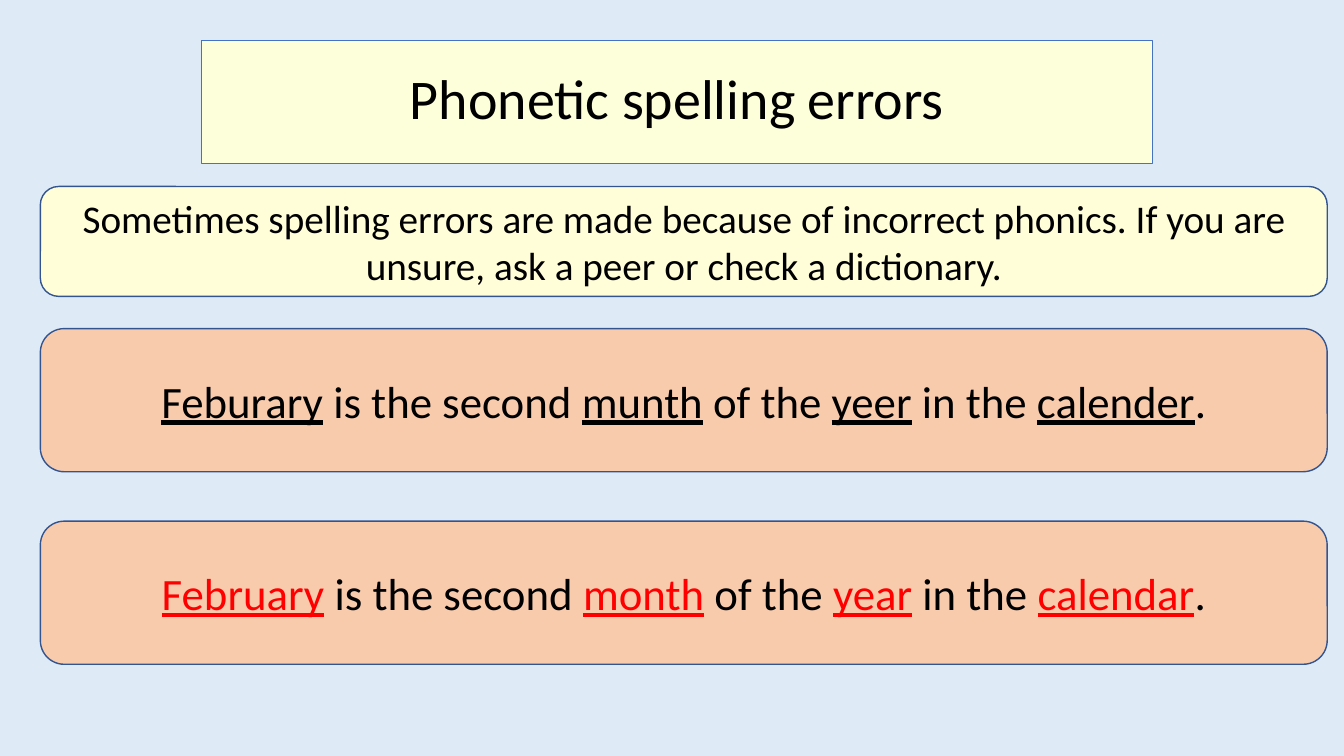
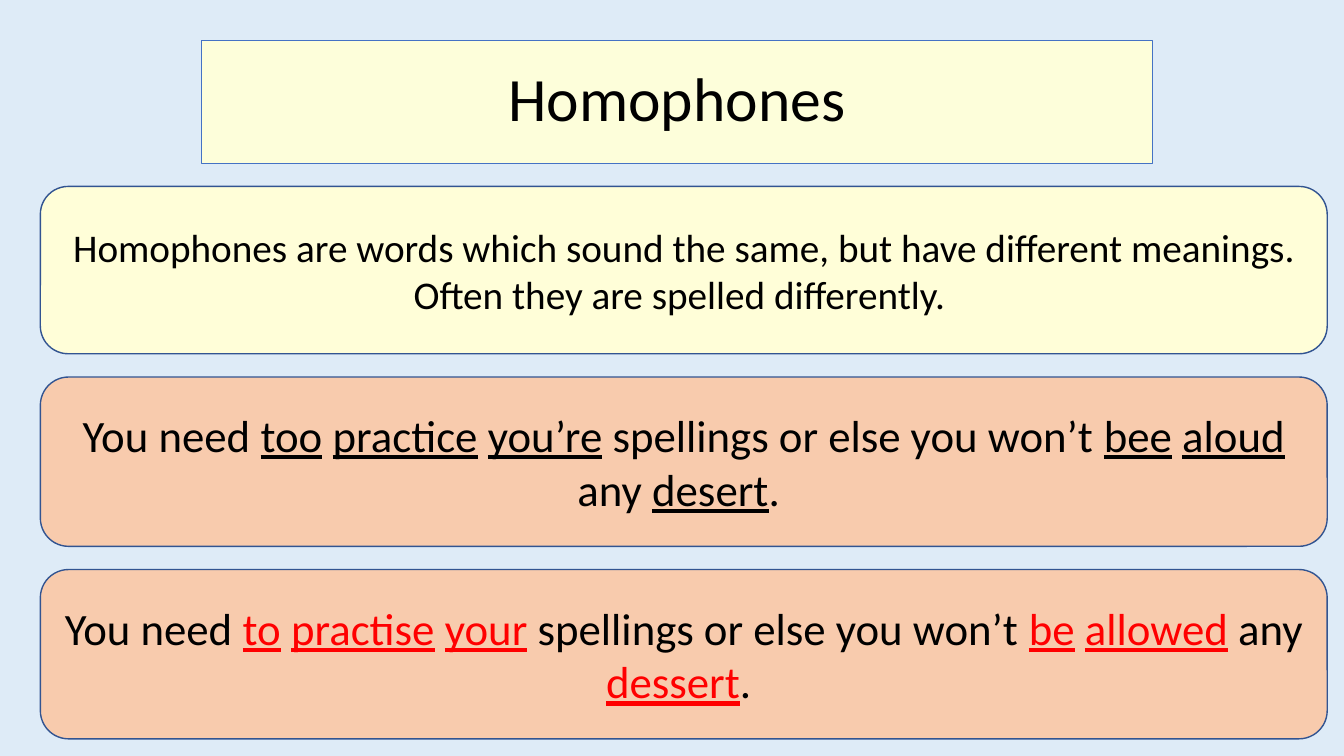
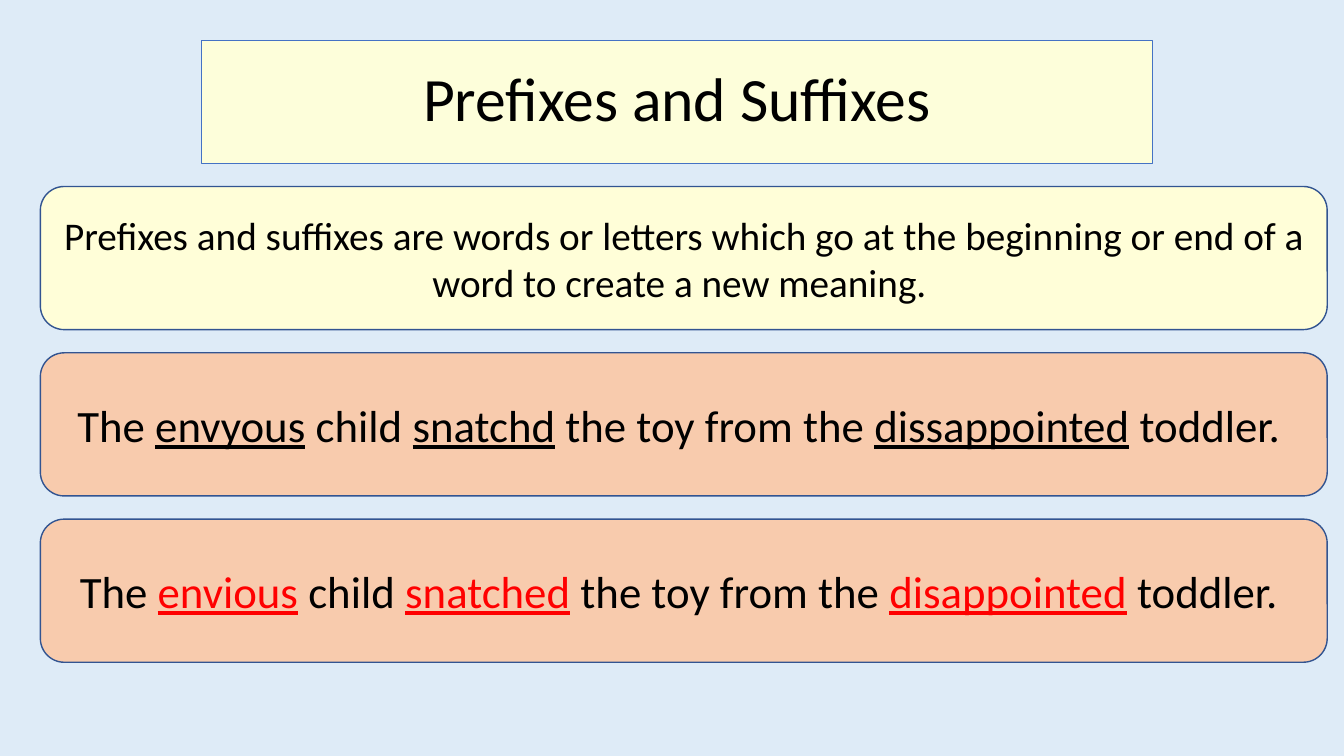
"""Build three slides on common kinds of spelling error."""
from pptx import Presentation
from pptx.dml.color import RGBColor
from pptx.enum.shapes import MSO_SHAPE
from pptx.enum.text import MSO_ANCHOR, MSO_AUTO_SIZE, PP_ALIGN
from pptx.util import Inches, Pt

ROUND = MSO_SHAPE.ROUNDED_RECTANGLE
MIDDLE = MSO_ANCHOR.MIDDLE
FIXED = MSO_AUTO_SIZE.NONE
CENTER = PP_ALIGN.CENTER

SKY = RGBColor(0xDE, 0xEB, 0xF7)
LEMON = RGBColor(0xFD, 0xFE, 0xDA)
CREAM = RGBColor(0xFF, 0xFE, 0xD8)
PEACH = RGBColor(0xF8, 0xCB, 0xAD)
BLUE = RGBColor(0x44, 0x72, 0xC4)
NAVY = RGBColor(0x32, 0x54, 0x91)
BLACK = RGBColor(0, 0, 0)
RED = RGBColor(0xFF, 0, 0)

FONT = "Calibri"
COLS, ROWS = 40, 30
TITLE = (6, 1.6, 28.3, 4.88)
LEFT, WIDE, TOP = 1.2, 38.3, 7.4
FRAME = {"word_wrap": True, "auto_size": FIXED, "vertical_anchor": MIDDLE}

LESSONS = [
    {
        "title": ("Phonetic spelling errors", 40),
        "rule": "Sometimes spelling errors are made because of incorrect "
                "phonics. If you are unsure, ask a peer or check a dictionary.",
        "wrong": "_Feburary_ is the second _munth_ of the _yeer_ in the _calender_.",
        "right": "_February_ is the second _month_ of the _year_ in the _calendar_.",
        "rows": (4.36, 5.68, 5.68),
        "gaps": (1.28, 1.96),
    },
    {
        "title": ("Homophones", 44),
        "rule": "Homophones are words which sound the same, but have different "
                "meanings. Often they are spelled differently. ",
        "wrong": "You need _too_ _practice_ _you’re_ spellings or else you "
                 "won’t _bee_ _aloud_ any _desert_. ",
        "right": "You need _to_ _practise_ _your_ spellings or else you "
                 "won’t _be_ _allowed_ any _dessert_. ",
        "rows": (6.64, 6.72, 6.72),
        "gaps": (0.92, 0.92),
    },
    {
        "title": ("Prefixes and Suffixes", 44),
        "rule": "Prefixes and suffixes are words or letters which go at the "
                "beginning or end of a word to create a new meaning. ",
        "wrong": "The _envyous_ child _snatchd_ the toy from the "
                 "_dissappointed_ toddler. ",
        "right": "The _envious_ child _snatched_ the toy from the "
                 "_disappointed_ toddler. ",
        "rows": (5.68, 5.68, 5.68),
        "gaps": (0.92, 0.92),
    },
]


class Deck:
    """Hold the shared style and the current slide."""

    def __init__(self):
        """Set the slide size and the background."""
        self.prs = Presentation()
        self.prs.slide_width = Inches(13.33)
        self.prs.slide_height = Inches(7.5)
        fill = self.prs.slide_master.background.fill
        fill.solid()
        fill.fore_color.rgb = SKY
        self.slide = None

    def place(self, cell):
        """Turn columns and rows into slide lengths."""
        col = self.prs.slide_width / COLS
        row = self.prs.slide_height / ROWS
        return [round(n * unit) for n, unit in zip(cell, (col, row, col, row))]

    def style(self, shape, fill, line, width):
        """Give a shape its fill, outline and text frame."""
        shape.fill.solid()
        shape.fill.fore_color.rgb = fill
        shape.line.color.rgb = line
        shape.line.width = Pt(width)
        for name, value in FRAME.items():
            setattr(shape.text_frame, name, value)

    def label(self, shape, text, size, mark=BLACK):
        """Set centred text, underlining the words between underscores."""
        para = shape.text_frame.paragraphs[0]
        para.alignment = CENTER
        for i, part in enumerate(text.split("_")):
            if not part:
                continue
            run = para.add_run()
            run.text = part
            marked = i % 2 == 1
            look = {"name": FONT, "size": Pt(size), "underline": marked}
            for name, value in look.items():
                setattr(run.font, name, value)
            run.font.color.rgb = mark if marked else BLACK
        return para

    def title(self, text, size):
        """Start a slide with its title."""
        self.slide = self.prs.slides.add_slide(self.prs.slide_layouts[5])
        shape = self.slide.shapes.title
        names = ("left", "top", "width", "height")
        for name, value in zip(names, self.place(TITLE)):
            setattr(shape, name, value)
        self.style(shape, LEMON, BLUE, 0.75)
        self.label(shape, text, size).line_spacing = 0.9

    def panel(self, top, high, fill, text, size, mark=BLACK):
        """Add a rounded panel across the slide."""
        cell = self.place((LEFT, top, WIDE, high))
        shape = self.slide.shapes.add_shape(ROUND, *cell)
        shape.shadow.inherit = False
        self.style(shape, fill, NAVY, 1)
        self.label(shape, text, size, mark)

    def lesson(self, data):
        """Stack the rule, the errors and the answer under a title."""
        self.title(*data["title"])
        looks = (
            (CREAM, data["rule"], 28),
            (PEACH, data["wrong"], 32),
            (PEACH, data["right"], 32, RED),
        )
        top = TOP
        for high, gap, look in zip(data["rows"], (*data["gaps"], 0), looks):
            self.panel(top, high, *look)
            top += high + gap


def main():
    """Build and save the deck."""
    deck = Deck()
    for data in LESSONS:
        deck.lesson(data)
    deck.prs.save("out.pptx")


if __name__ == "__main__":
    main()
